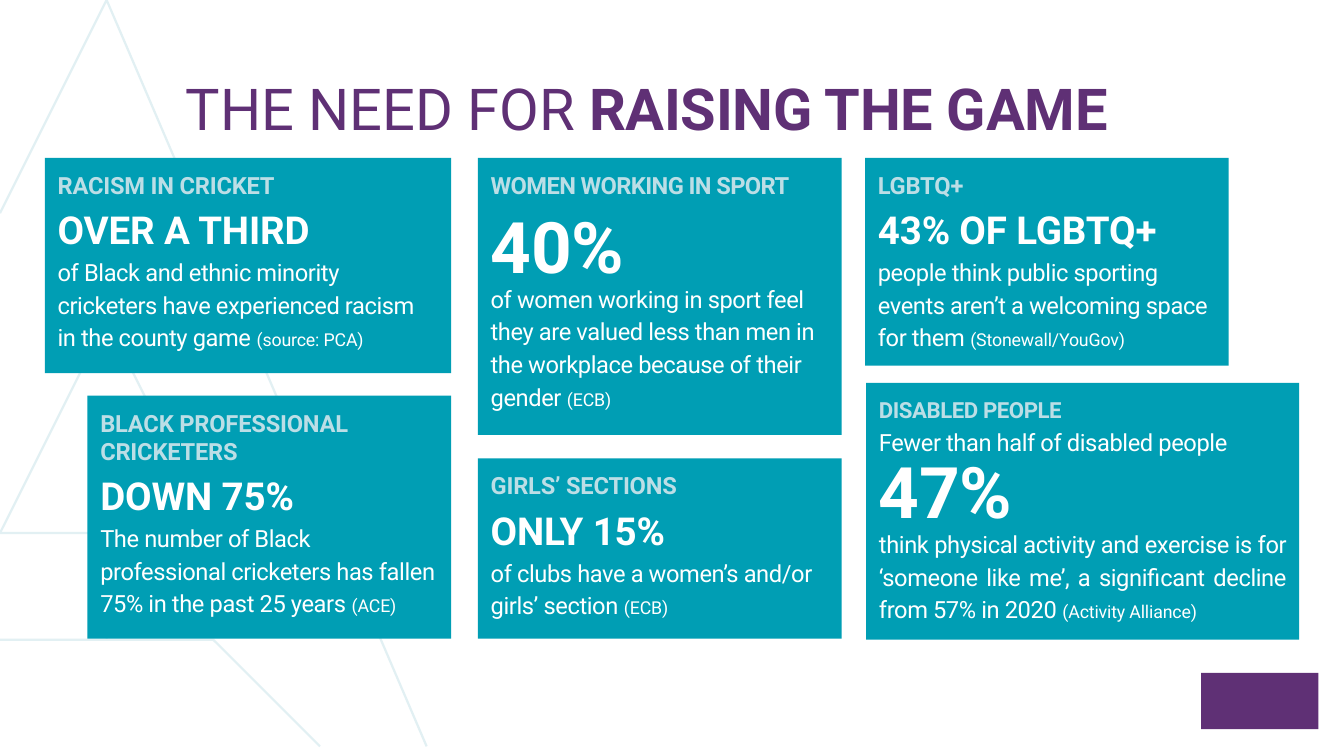
from pptx import Presentation
from pptx.dml.color import RGBColor
from pptx.enum.shapes import MSO_SHAPE
from pptx.enum.text import MSO_ANCHOR, PP_ALIGN
from pptx.util import Inches, Pt

PURPLE = RGBColor(0x5F, 0x30, 0x75)
TEAL = RGBColor(0x00, 0x9E, 0xB4)
PALE_TEAL = RGBColor(0xBC, 0xDE, 0xE6)
OUTLINE = RGBColor(0xE2, 0xF0, 0xF3)
WHITE = RGBColor(0xFF, 0xFF, 0xFF)
RECTANGLE = MSO_SHAPE.RECTANGLE
TOP = MSO_ANCHOR.TOP
LEFT, JUSTIFY = PP_ALIGN.LEFT, PP_ALIGN.JUSTIFY
FONT = "Roboto"
PADDING = 0.12

# Large letter outline behind the cards
LETTER_OUTER = [
    (0, 1.58), (0.63, 0.21), (0.66, 0.17), (0.7, 0.14), (0.75, 0.11), (0.8, 0.11),
    (0.95, 0.11), (1, 0.14), (1.04, 0.17), (1.07, 0.21), (4.17, 6.9), (4.18, 6.95),
    (4.19, 7), (4.18, 7.04), (4.16, 7.08), (4.15, 7.09),
]
LETTER_INNER = [
    (2.68, 7.09), (2.64, 7.06), (2.61, 7.02), (2.58, 6.97), (2.55, 6.91), (2.2, 6.13),
    (1.15, 6.13), (1.15, 4.78), (1.6, 4.78), (0.85, 3.14), (0.84, 3.14), (0.1, 4.78),
    (0.54, 4.78), (0.54, 6.13), (0, 6.13),
]

# Left, top, width, height, right margin, heading, figure, body, source
FACT_CARDS = [
    (0.42, 1.48, 3.81, 2.02, 0.3, "RACISM IN CRICKET", "OVER A THIRD",
     "of Black and ethnic minority cricketers have experienced racism in the county game ",
     "(source: PCA)"),
    (0.82, 3.71, 3.41, 2.28, 0.15, "BLACK PROFESSIONAL CRICKETERS", "DOWN 75%",
     "The number of Black professional cricketers has fallen 75% in the past 25 years ",
     "(ACE)"),
    (4.48, 4.3, 3.41, 1.69, 0.15, "GIRLS’ SECTIONS", "ONLY 15%",
     "of clubs have a women’s and/or girls’ section ", "(ECB)"),
    (8.11, 1.48, 3.41, 1.95, 0.15, "LGBTQ+", "43% OF LGBTQ+",
     "people think public sporting events aren’t a welcoming space for them ",
     "(Stonewall/YouGov)"),
]


def add_span(para, text, size=16, color=WHITE, bold=False, spacing=0.0):
    span = para.add_run()
    span.text = text
    span.font.name = FONT
    span.font.size = Pt(size)
    span.font.bold = bold
    span.font.color.rgb = color
    if spacing:
        span._r.get_or_add_rPr().set("spc", str(round(spacing * 100)))


def set_frame(box, left=0.0, top=0.0, right=0.0):
    frame = box.text_frame
    frame.word_wrap = True
    frame.vertical_anchor = TOP
    frame.margin_left, frame.margin_top = Inches(left), Inches(top)
    frame.margin_right, frame.margin_bottom = Inches(right), 0
    return frame


def add_block(page, left, top, width, height):
    block = page.shapes.add_shape(
        RECTANGLE, Inches(left), Inches(top), Inches(width), Inches(height))
    block.shadow.inherit = False
    block.fill.solid()
    block.line.fill.background()
    return block


def add_card(page, left, top, width, height):
    card = add_block(page, left, top, width, height)
    card.fill.fore_color.rgb = TEAL
    return card


def add_text(page, left, top, width, height):
    box = page.shapes.add_textbox(
        Inches(left), Inches(top), Inches(width), Inches(height))
    return set_frame(box, top=0.02).paragraphs[0]


def add_body(para, body, source, align=LEFT):
    para.alignment = align
    para.line_spacing = 1.15
    add_span(para, body, spacing=-0.25)
    add_span(para, source, size=12, spacing=-0.1)


def add_fact_card(page, left, top, width, height, right, heading, figure, body, source):
    card = add_card(page, left, top, width, height)
    frame = set_frame(card, PADDING, PADDING, right)
    heading_para = frame.paragraphs[0]
    heading_para.alignment = LEFT
    add_span(heading_para, heading, color=PALE_TEAL, bold=True, spacing=-0.1)
    figure_para = frame.add_paragraph()
    figure_para.alignment = LEFT
    figure_para.space_before = Pt(4.8)
    add_span(figure_para, figure, size=26, bold=True, spacing=-0.1)
    body_para = frame.add_paragraph()
    body_para.space_before = Pt(0.8)
    add_body(body_para, body, source)


def add_outline(page, points):
    builder = page.shapes.build_freeform(*points[0], scale=Inches(1))
    builder.add_line_segments(points[1:], close=False)
    outline = builder.convert_to_shape()
    outline.shadow.inherit = False
    outline.fill.background()
    outline.line.color.rgb = OUTLINE
    outline.line.width = Pt(1.5)


def add_women_card(page):
    add_card(page, 4.48, 1.48, 3.41, 2.6)
    add_span(add_text(page, 4.6, 1.58, 3.12, 0.29), "WOMEN WORKING IN SPORT",
             color=PALE_TEAL, bold=True, spacing=-0.4)
    add_span(add_text(page, 4.6, 1.88, 1.48, 0.83), "40%",
             size=48, bold=True, spacing=-0.2)
    add_body(add_text(page, 4.6, 2.61, 3.14, 1.25),
             "of women working in sport feel they are valued less than men in the "
             "workplace because of their gender ", "(ECB)")


def add_disabled_card(page):
    add_card(page, 8.12, 3.59, 4.06, 2.41)
    add_span(add_text(page, 8.24, 3.7, 1.85, 0.28), "DISABLED PEOPLE",
             size=15, color=PALE_TEAL, bold=True, spacing=-0.3)
    add_span(add_text(page, 8.24, 3.99, 3.42, 0.29),
             "Fewer than half of disabled people", spacing=-0.25)
    add_span(add_text(page, 8.24, 4.18, 1.48, 0.83), "47%",
             size=48, bold=True, spacing=-0.2)
    add_body(add_text(page, 8.24, 4.91, 3.82, 0.94),
             "think physical activity and exercise is for ‘someone like me’, "
             "a significant decline from 57% in 2020 ", "(Activity Alliance)",
             align=JUSTIFY)


def main():
    deck = Presentation()
    deck.slide_width, deck.slide_height = Inches(12.6), Inches(7.09)
    page = deck.slides.add_slide(deck.slide_layouts[6])

    # Background
    for points in (LETTER_OUTER, LETTER_INNER):
        add_outline(page, points)

    # Title
    title = add_text(page, 1.74, 0.66, 9.12, 0.68)
    add_span(title, "THE NEED FOR ", size=39, color=PURPLE)
    add_span(title, "RAISING THE GAME", size=39, color=PURPLE, bold=True, spacing=-0.2)

    # Cards
    for fact in FACT_CARDS:
        add_fact_card(page, *fact)
    add_women_card(page)
    add_disabled_card(page)

    # Plain corner mark
    mark = add_block(page, 11.26, 6.31, 1.1, 0.53)
    mark.fill.fore_color.rgb = PURPLE

    deck.save("out.pptx")


if __name__ == "__main__":
    main()
